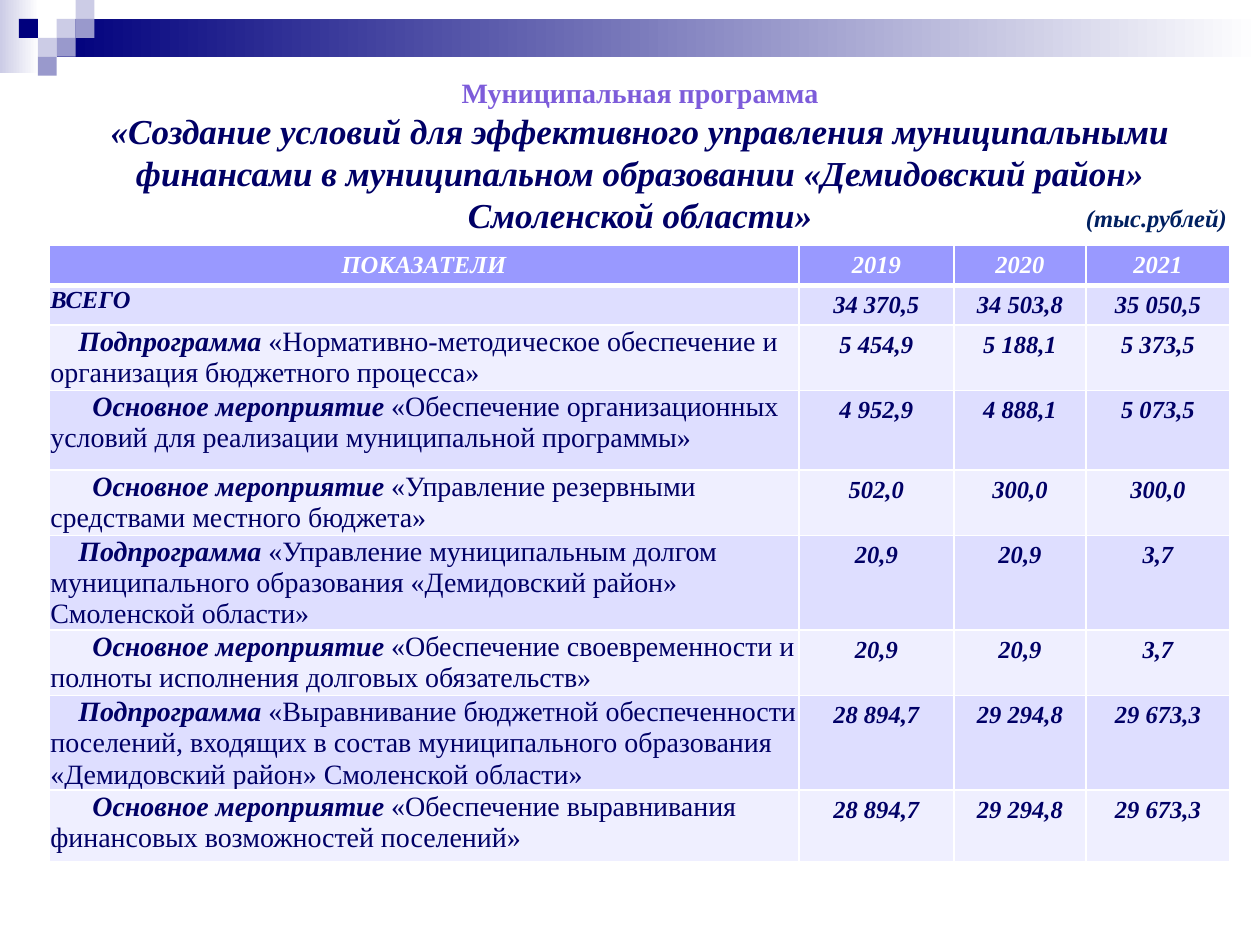
"""Build the slide on the municipal finance programme with its table of figures."""
import pptx
import pptx.dml.color
import pptx.enum.shapes
import pptx.enum.text
import pptx.oxml
import pptx.oxml.ns
import pptx.util

COLORS = {
    "navy": "00007D", "lilac": "CCCCE6", "slate": "9999CC", "white": "FFFFFF",
    "header": "9999FF", "dark_band": "DEDEFF", "light_band": "EFEFFF",
    "ink": "000066", "violet": "7D5CDA", "unit": "002060",
}
FONT = "Times New Roman"
ALIGN = pptx.enum.text.PP_ALIGN

TITLE = "Муниципальная программа"
PROGRAMME = ("«Создание условий для эффективного управления муниципальными финансами "
             "в муниципальном образовании «Демидовский район» Смоленской области»")
UNIT = "(тыс.рублей)"
HEADER = ["ПОКАЗАТЕЛИ", "2019", "2020", "2021"]
TOTAL, SUB, MAIN = "ВСЕГО", "Подпрограмма", "Основное мероприятие"
ROWS = [
    (TOTAL, "", ["34 370,5", "34 503,8", "35 050,5"]),
    (SUB, "«Нормативно-методическое обеспечение и организация бюджетного процесса»",
     ["5 454,9", "5 188,1", "5 373,5"]),
    (MAIN, "«Обеспечение организационных условий для реализации муниципальной программы»",
     ["4 952,9", "4 888,1", "5 073,5"]),
    (MAIN, "«Управление резервными средствами местного бюджета»",
     ["502,0", "300,0", "300,0"]),
    (SUB, "«Управление муниципальным долгом муниципального образования "
          "«Демидовский район» Смоленской области»", ["20,9", "20,9", "3,7"]),
    (MAIN, "«Обеспечение своевременности и полноты исполнения долговых обязательств»",
     ["20,9", "20,9", "3,7"]),
    (SUB, "«Выравнивание бюджетной обеспеченности поселений, входящих в состав "
          "муниципального образования «Демидовский район» Смоленской области»",
     ["28 894,7", "29 294,8", "29 673,3"]),
    (MAIN, "«Обеспечение выравнивания финансовых возможностей поселений»",
     ["28 894,7", "29 294,8", "29 673,3"]),
]
INDENTS = {TOTAL: 0, SUB: 16, MAIN: 24}
COLUMN_WIDTHS = [5.95, 1.23, 1.05, 1.14]
ROW_HEIGHTS = [0.31, 0.31, 0.52, 0.63, 0.52, 0.74, 0.52, 0.74, 0.57]
LEFT, WIDTH = 0.39, 9.38

SQUARE = 0.15
GRADIENTS = [("lilac", 0, 0, 0.31, 0.58), ("navy", 0.45, 0.15, 9.55, 0.3)]
SQUARES = [("lilac", 3, 1), ("lilac", 4, 0), ("slate", 4, 1), ("lilac", 2, 2),
           ("navy", 1, 1), ("slate", 3, 2), ("slate", 2, 3)]


def rgb(name):
    return pptx.dml.color.RGBColor.from_string(COLORS[name])


def inches(*lengths):
    return [pptx.util.Inches(length) for length in lengths]


def write(para, text, size=14, color="ink", bold=True, italic=True, align=None):
    if align is not None:
        para.alignment = align
    span = para.add_run()
    span.text = text
    font = span.font
    font.name, font.size = FONT, pptx.util.Pt(size)
    font.bold, font.italic = bold, italic
    font.color.rgb = rgb(color)


def add_block(page, color, left, top, width, height, fade=False):
    block = page.shapes.add_shape(pptx.enum.shapes.MSO_SHAPE.RECTANGLE,
                                  *inches(left, top, width, height))
    block.shadow.inherit = False
    block.line.fill.background()
    if fade:
        block.fill.gradient()
        block.fill.gradient_angle = 0
        for stop, name in zip(block.fill.gradient_stops, (color, "white")):
            stop.color.rgb = rgb(name)
    else:
        block.fill.solid()
        block.fill.fore_color.rgb = rgb(color)


def style_cell(cell, fill, row):
    properties = cell._tc.get_or_add_tcPr()
    for side in "LRTB":
        thick = (row == 0 and side == "B") or (row == 1 and side == "T")
        properties.append(pptx.oxml.parse_xml(
            f'<a:ln{side} {pptx.oxml.ns.nsdecls("a")} w="{pptx.util.Pt(3 if thick else 1)}">'
            f'<a:solidFill><a:srgbClr val="{COLORS["white"]}"/></a:solidFill></a:ln{side}>'))
    cell.fill.solid()
    cell.fill.fore_color.rgb = rgb(fill)


def add_figures(page):
    table = page.shapes.add_table(len(ROWS) + 1, len(HEADER),
                                  *inches(LEFT, 1.95, WIDTH, sum(ROW_HEIGHTS))).table
    for column, width in zip(table.columns, COLUMN_WIDTHS):
        column.width = pptx.util.Inches(width)
    for row, height in zip(table.rows, ROW_HEIGHTS):
        row.height = pptx.util.Inches(height)
    for cell, text in zip(table.rows[0].cells, HEADER):
        style_cell(cell, "header", 0)
        write(cell.text_frame.paragraphs[0], text, color="white", align=ALIGN.CENTER)
    for index, (kind, name, values) in enumerate(ROWS, 1):
        label, *numbers = table.rows[index].cells
        for cell in (label, *numbers):
            style_cell(cell, "dark_band" if index % 2 else "light_band", index)
        label.margin_left = label.margin_top = label.margin_right = pptx.util.Inches(0.01)
        label.margin_bottom = 0
        para = label.text_frame.paragraphs[0]
        para._p.get_or_add_pPr().set("indent", str(pptx.util.Pt(INDENTS[kind])))
        write(para, kind, size=16 if name else 14)
        if name:
            write(para, " " + name, size=16, bold=False, italic=False)
        for cell, value in zip(numbers, values):
            write(cell.text_frame.paragraphs[0], value, align=ALIGN.CENTER)


def add_heading(page):
    title = page.shapes.title
    title.left, title.top, title.width, title.height = inches(LEFT, 0.55, WIDTH, 1.38)
    frame = title.text_frame
    frame.auto_size = pptx.enum.text.MSO_AUTO_SIZE.NONE
    frame.vertical_anchor = pptx.enum.text.MSO_ANCHOR.TOP
    write(frame.paragraphs[0], TITLE, size=16, color="violet", italic=False,
          align=ALIGN.CENTER)
    write(frame.add_paragraph(), PROGRAMME, size=20, align=ALIGN.CENTER)
    box = page.shapes.add_textbox(*inches(8.52, 1.56, 1.33, 0.34))
    box.text_frame.word_wrap = False
    write(box.text_frame.paragraphs[0], UNIT, color="unit")


def main():
    deck = pptx.Presentation()
    deck.slide_width, deck.slide_height = inches(10, 7.5)
    page = deck.slides.add_slide(deck.slide_layouts[5])
    for color, *place in GRADIENTS:
        add_block(page, color, *place, fade=True)
    for color, column, row in SQUARES:
        add_block(page, color, column * SQUARE, row * SQUARE, SQUARE, SQUARE)
    add_figures(page)
    add_heading(page)
    deck.save("out.pptx")


if __name__ == "__main__":
    main()
